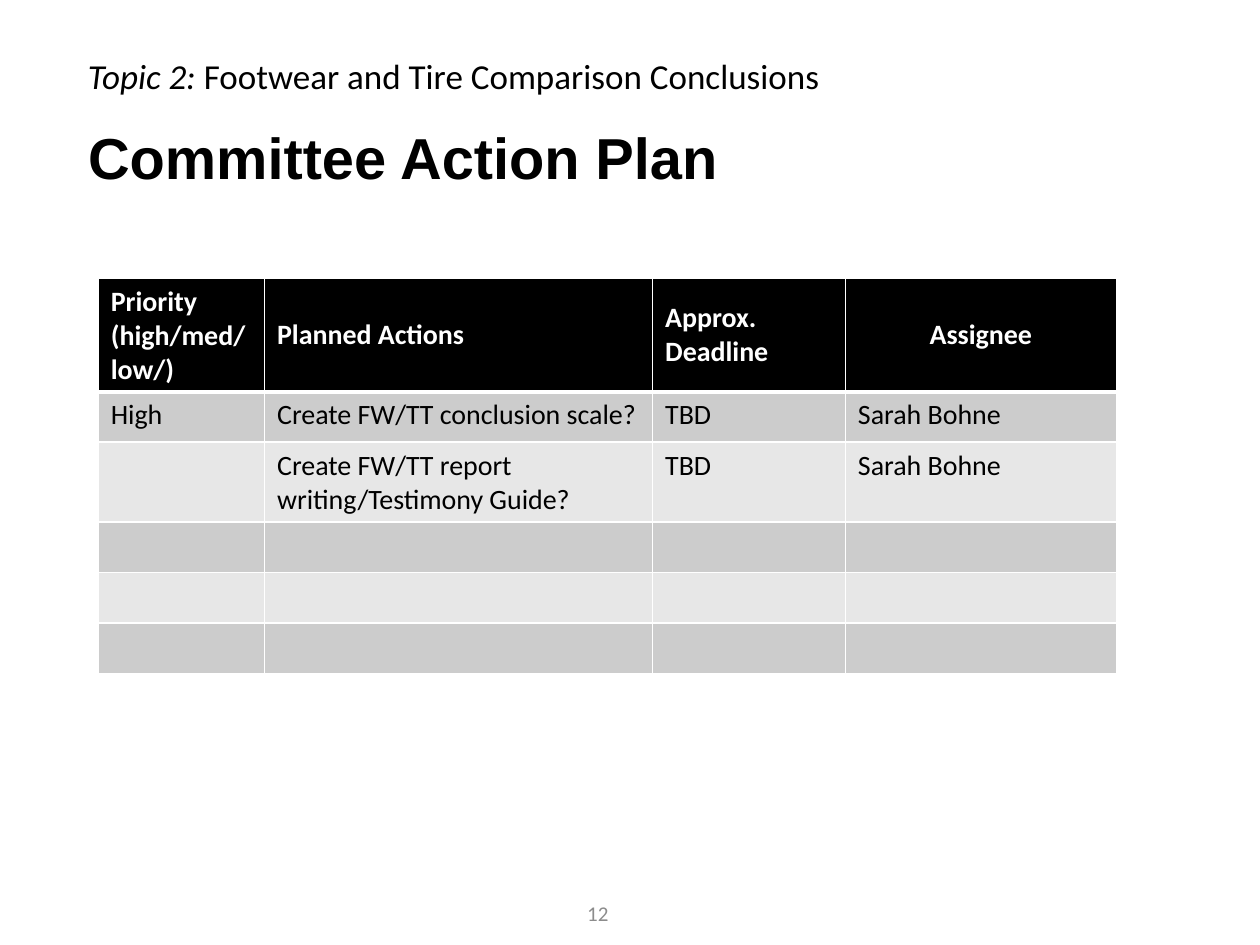
from dataclasses import dataclass
from typing import Optional

from lxml.etree import SubElement
from pptx import Presentation
from pptx.dml.color import RGBColor
from pptx.enum.text import MSO_ANCHOR, PP_ALIGN
from pptx.oxml.ns import qn
from pptx.util import Inches, Pt

COLORS = {
    "black": "000000",
    "white": "FFFFFF",
    "band_dark": "CCCCCC",
    "band_light": "E7E7E7",
    "number": "8C8C8C",
}
COLUMN_WIDTHS = [1.32, 3.08, 1.53, 2.15]
HEADER_HEIGHT, ROW_HEIGHT = 0.67, 0.4
HEADERS = ["Priority (high/med/low/)", "Planned Actions", "Approx. Deadline", "Assignee"]
EMPTY_ROW = [""] * len(HEADERS)
ACTIONS = [
    ["High", "Create FW/TT conclusion scale?", "TBD", "Sarah Bohne"],
    ["", "Create FW/TT report writing/Testimony Guide?", "TBD", "Sarah Bohne"],
    EMPTY_ROW,
    EMPTY_ROW,
    EMPTY_ROW,
]


@dataclass
class TextStyle:
    size: float
    color: str = "black"
    font: str = "Calibri"
    bold: bool = False
    italic: bool = False


@dataclass
class TextBlock:
    left: float
    top: float
    width: float
    height: float
    runs: list[tuple[str, TextStyle]]
    anchor: MSO_ANCHOR = MSO_ANCHOR.TOP
    align: Optional[PP_ALIGN] = None
    line_spacing: Optional[float] = None


def add_run(paragraph, text: str, style: TextStyle) -> None:
    run = paragraph.add_run()
    run.text = text
    run.font.name = style.font
    run.font.size = Pt(style.size)
    run.font.bold = style.bold
    run.font.italic = style.italic
    run.font.color.rgb = RGBColor.from_string(COLORS[style.color])


def add_text(slide, block: TextBlock) -> None:
    shape = slide.shapes.add_textbox(
        Inches(block.left), Inches(block.top), Inches(block.width), Inches(block.height)
    )
    frame = shape.text_frame
    frame.word_wrap = True
    frame.vertical_anchor = block.anchor
    paragraph = frame.paragraphs[0]
    paragraph.alignment = block.align
    paragraph.line_spacing = block.line_spacing
    for text, style in block.runs:
        add_run(paragraph, text, style)


def set_borders(cell, top: float, bottom: float) -> None:
    properties = cell._tc.get_or_add_tcPr()
    for side, width in (("L", 1), ("R", 1), ("T", top), ("B", bottom)):
        line = SubElement(properties, qn(f"a:ln{side}"), w=str(Pt(width)))
        fill = SubElement(line, qn("a:solidFill"))
        SubElement(fill, qn("a:srgbClr"), val=COLORS["white"])


def add_action_table(slide, left: float, top: float) -> None:
    rows = [HEADERS] + ACTIONS
    height = HEADER_HEIGHT + ROW_HEIGHT * len(ACTIONS)
    table = slide.shapes.add_table(
        len(rows), len(HEADERS), Inches(left), Inches(top),
        Inches(sum(COLUMN_WIDTHS)), Inches(height),
    ).table
    for column, width in zip(table.columns, COLUMN_WIDTHS):
        column.width = Inches(width)

    for row_index, texts in enumerate(rows):
        is_header = row_index == 0
        table.rows[row_index].height = Inches(HEADER_HEIGHT if is_header else ROW_HEIGHT)
        band = "black" if is_header else "band_dark" if row_index % 2 else "band_light"
        style = TextStyle(16, "white" if is_header else "black", bold=is_header)
        for column_index, text in enumerate(texts):
            cell = table.cell(row_index, column_index)
            # Borders come before the fill in the cell properties
            set_borders(cell, top=3 if row_index == 1 else 1, bottom=3 if is_header else 1)
            cell.fill.solid()
            cell.fill.fore_color.rgb = RGBColor.from_string(COLORS[band])
            paragraph = cell.text_frame.paragraphs[0]
            if is_header:
                cell.vertical_anchor = MSO_ANCHOR.MIDDLE
                if text == "Assignee":
                    paragraph.alignment = PP_ALIGN.CENTER
            if text:
                add_run(paragraph, text, style)


def main() -> None:
    presentation = Presentation()
    presentation.slide_width = Inches(10)
    presentation.slide_height = Inches(7.5)
    slide = presentation.slides.add_slide(presentation.slide_layouts[6])

    # Title
    add_text(slide, TextBlock(
        0.6, 0.55, 8.62, 1.45,
        [("Committee Action Plan", TextStyle(33, font="Arial", bold=True))],
        anchor=MSO_ANCHOR.MIDDLE, line_spacing=0.9,
    ))

    # Action plan
    add_action_table(slide, 0.78, 2.21)

    # Topic line
    add_text(slide, TextBlock(
        0.6, 0.38, 7.23, 0.44,
        [("Topic 2: ", TextStyle(20, italic=True)),
         ("Footwear and Tire Comparison Conclusions", TextStyle(20))],
    ))

    # Slide number
    add_text(slide, TextBlock(
        3.62, 7.05, 2.25, 0.4, [("12", TextStyle(12, "number"))],
        anchor=MSO_ANCHOR.MIDDLE, align=PP_ALIGN.CENTER,
    ))

    presentation.save("out.pptx")


if __name__ == "__main__":
    main()
